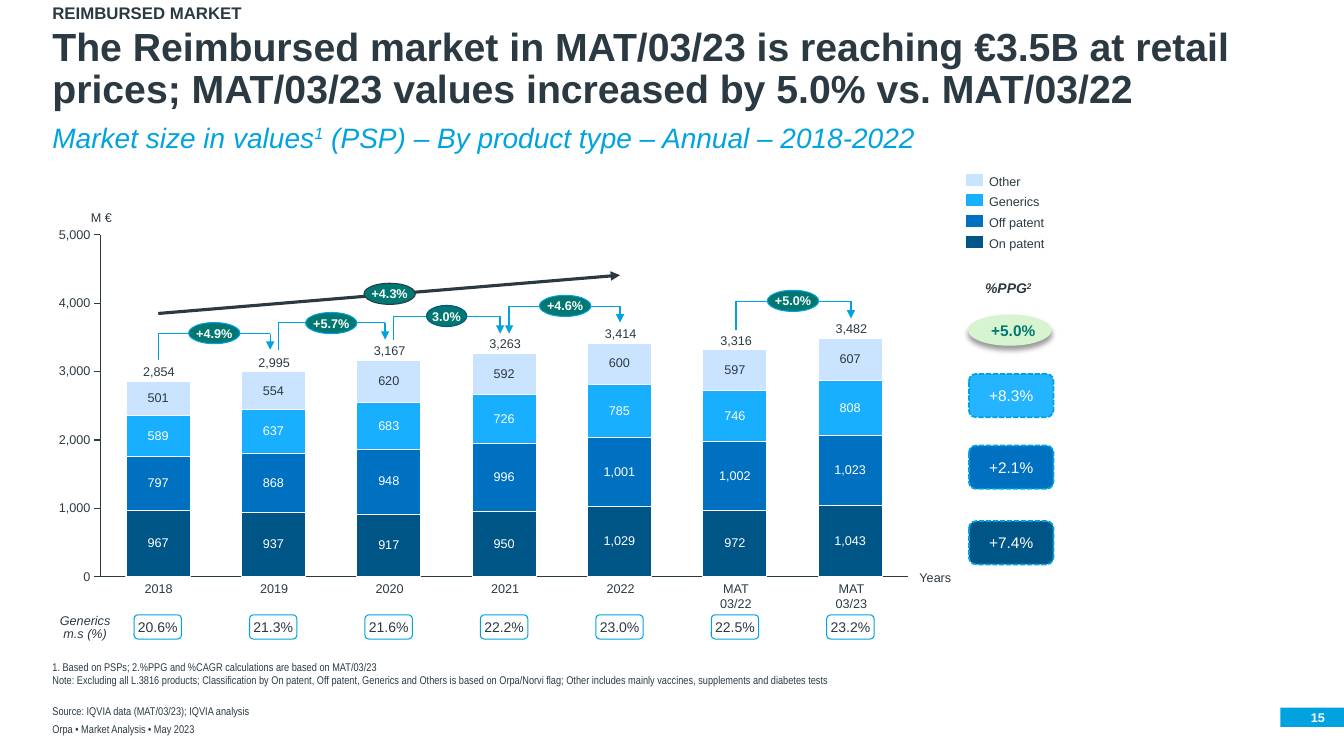
from lxml import etree
from pptx import Presentation
from pptx import util as u
from pptx.chart.data import CategoryChartData
from pptx.dml.color import RGBColor
from pptx.enum import chart as charts, dml, shapes, text
from pptx.oxml import parse_xml
from pptx.oxml.ns import nsdecls, qn

PX = 9144
DARK, CYAN, WHITE, GREEN = "2B3A42", "00A3E0", "FFFFFF", "007770"
FIRST_BAR, BAR_STEP = 157, 114.5
AXIS_BOTTOM, AXIS_HEIGHT, AXIS_MAX = 572, 339, 5000

YEARS = ["2018", "2019", "2020", "2021", "2022", "MAT\v03/22", "MAT\v03/23"]
TOTALS = [2854, 2995, 3167, 3263, 3414, 3316, 3482]
SHARES = ["20.6%", "21.3%", "21.6%", "22.2%", "23.0%", "22.5%", "23.2%"]
PRODUCTS = [
    ("On patent", "005587", WHITE, [967, 937, 917, 950, 1029, 972, 1043]),
    ("Off patent", "0070C0", WHITE, [797, 868, 948, 996, 1001, 1002, 1023]),
    ("Generics", "18AFFF", WHITE, [589, 637, 683, 726, 785, 746, 808]),
    ("Other", "CAE3FF", DARK, [501, 554, 620, 592, 600, 597, 607]),
]
BRACKETS = [
    (157, 268, 331, 357, 347, False),
    (276, 382, 320, 347, 337, False),
    (390, 496, 314, 337, 331, False),
    (505, 615, 304, 331, 320, True),
    (730, 844, 299, 327, 316, False),
]
GROWTH = [
    (187, 320, 51, "+4.9%", CYAN),
    (303, 310, 51, "+5.7%", CYAN),
    (361, 281, 51, "+4.3%", DARK),
    (423, 303, 40, "3.0%", "005587"),
    (535, 293, 51, "+4.6%", CYAN),
    (761, 288, 51, "+5.0%", CYAN),
]
PRODUCT_GROWTH = [(371, "+8.3%", "25B4FF"), (442, "+2.1%", "0070C0"), (517, "+7.4%", "005587")]


def px(value):
    return u.Emu(round(value * PX))


def rgb(value):
    return RGBColor.from_string(value)


def style_font(font, size, color, name="Arial", bold=False, italic=False):
    font.name, font.size, font.bold, font.italic = name, u.Pt(size), bold, italic
    font.color.rgb = rgb(color)


def write(shape, content, size=9, color=DARK, name="Arial", bold=False, italic=False,
          align="CENTER", anchor="MIDDLE", spacing=1.0, wrap=False):
    frame = shape.text_frame
    frame.auto_size = text.MSO_AUTO_SIZE.NONE
    frame.word_wrap = wrap
    frame.vertical_anchor = text.MSO_ANCHOR[anchor]
    frame.margin_left = frame.margin_right = frame.margin_top = frame.margin_bottom = 0
    for index, line in enumerate(content.split("\n")):
        paragraph = frame.add_paragraph() if index else frame.paragraphs[0]
        paragraph.alignment = text.PP_ALIGN[align]
        paragraph.line_spacing = spacing
        for row, part in enumerate(line.split("\v")):
            if row:
                paragraph.add_line_break()
            for piece, words in enumerate(part.split("^")):
                if words:
                    run = paragraph.add_run()
                    run.text = words
                    style_font(run.font, size, color, name, bold, italic)
                    if piece % 2:
                        run._r.get_or_add_rPr().set("baseline", "30000")


def add_text(slide, box, content, **style):
    shape = slide.shapes.add_textbox(*map(px, box))
    write(shape, content, **style)


def add_box(slide, kind, box, fill=None, line=None, width=0.75, dashed=False):
    shape = slide.shapes.add_shape(shapes.MSO_SHAPE[kind], *map(px, box))
    shape.shadow.inherit = False
    if fill:
        shape.fill.solid()
        shape.fill.fore_color.rgb = rgb(fill)
    else:
        shape.fill.background()
    if line:
        shape.line.color.rgb = rgb(line)
        shape.line.width = u.Pt(width)
        if dashed:
            shape.line.dash_style = dml.MSO_LINE.SQUARE_DOT
    else:
        shape.line.fill.background()
    return shape


def add_line(slide, start, end, color=CYAN, width=1, arrow=False):
    line = slide.shapes.add_connector(shapes.MSO_CONNECTOR.STRAIGHT, *map(px, start + end))
    line.line.color.rgb = rgb(color)
    line.line.width = u.Pt(width)
    if arrow:
        etree.SubElement(line.line._get_or_add_ln(), qn("a:tailEnd"), type="triangle")
    etree.SubElement(line._element.spPr, qn("a:effectLst"))


def add_bracket(slide, left, right, top, left_end, right_end, both):
    add_line(slide, (left, top), (left, left_end), arrow=both)
    add_line(slide, (left, top), (right, top))
    add_line(slide, (right, top), (right, right_end), arrow=True)


def add_shadow(shape):
    shape._element.spPr.find(qn("a:effectLst")).append(parse_xml(
        f'<a:outerShdw {nsdecls("a")} blurRad="50800" dist="38100" dir="5400000">'
        '<a:srgbClr val="000000"><a:alpha val="40000"/></a:srgbClr></a:outerShdw>'))


def place_plot(chart, x, y, w, h):
    area = chart._chartSpace.chart.plotArea
    for layout in area.findall(qn("c:layout")):
        area.remove(layout)
    sizes = "".join(f'<c:{tag} val="{value}"/>' for tag, value in zip("xywh", (x, y, w, h)))
    area.insert(0, parse_xml(
        f'<c:layout {nsdecls("c")}><c:manualLayout><c:layoutTarget val="inner"/>'
        f'<c:xMode val="edge"/><c:yMode val="edge"/>{sizes}</c:manualLayout></c:layout>'))


def add_market_chart(slide):
    data = CategoryChartData(number_format="#,##0")
    data.categories = [year.replace("\v", " ") for year in YEARS]
    for name, _, _, values in PRODUCTS:
        data.add_series(name, values)
    chart = slide.shapes.add_chart(
        charts.XL_CHART_TYPE.COLUMN_STACKED, *map(px, (46, 223, 864, 359)), data).chart
    chart.has_legend = chart.has_title = False
    style_font(chart.font, 9, DARK)
    place_plot(chart, 0.062, 0.028, 0.927, 0.945)

    plot = chart.plots[0]
    plot.gap_width, plot.overlap, plot.vary_by_categories = 80, 100, False
    for series, (_, fill, label_color, _) in zip(plot.series, PRODUCTS):
        series.format.fill.solid()
        series.format.fill.fore_color.rgb = rgb(fill)
        series.format.line.color.rgb = rgb(WHITE)
        series.format.line.width = u.Pt(0.75)
        labels = series.data_labels
        labels.show_value = True
        labels.number_format, labels.number_format_is_linked = "#,##0", False
        labels.position = charts.XL_LABEL_POSITION.CENTER
        style_font(labels.font, 9, label_color)

    years, values = chart.category_axis, chart.value_axis
    for axis in (years, values):
        axis.has_major_gridlines = False
        axis.minor_tick_mark = charts.XL_TICK_MARK.NONE
        axis.format.line.color.rgb = rgb(DARK)
        axis.format.line.width = u.Pt(0.75)
    years.tick_label_position = charts.XL_TICK_LABEL_POSITION.NONE
    years.major_tick_mark = charts.XL_TICK_MARK.NONE
    values.major_tick_mark = charts.XL_TICK_MARK.OUTSIDE
    values.minimum_scale, values.maximum_scale, values.major_unit = 0, AXIS_MAX, 1000
    values.tick_labels.number_format = "#,##0"
    values.tick_labels.number_format_is_linked = False
    style_font(values.tick_labels.font, 9, DARK)


def add_headings(slide):
    title = slide.shapes.title
    title.left, title.top, title.width, title.height = map(px, (52, 26, 1230, 85))
    write(title, "The Reimbursed market in MAT/03/23 is reaching €3.5B at retail prices; "
          "MAT/03/23 values increased by 5.0% vs. MAT/03/22",
          size=28, bold=True, align="LEFT", anchor="BOTTOM", spacing=0.9, wrap=True)
    lead = dict(align="LEFT", anchor="TOP", spacing=0.9, wrap=True)
    add_text(slide, (52, 5, 1230, 18), "REIMBURSED MARKET", size=12, bold=True, **lead)
    add_text(slide, (52, 123, 1230, 30),
             "Market size in values^1^ (PSP) – By product type – Annual – 2018-2022",
             size=20, color=CYAN, italic=True, **lead)


def add_footer(slide):
    small = dict(size=8, name="Arial Narrow", align="LEFT", anchor="BOTTOM", spacing=0.9, wrap=True)
    add_text(slide, (52, 657, 1230, 24),
             "1. Based on PSPs; 2.%PPG and %CAGR calculations are based on MAT/03/23\n"
             "Note: Excluding all L.3816 products; Classification by On patent, Off patent, "
             "Generics and Others is based on Orpa/Norvi flag; Other includes mainly vaccines, "
             "supplements and diabetes tests", **small)
    add_text(slide, (52, 700, 827, 12), "Source: IQVIA data (MAT/03/23); IQVIA analysis", **small)
    add_text(slide, (52, 718, 827, 12), "Orpa • Market Analysis • May 2023", **small)
    add_box(slide, "RECTANGLE", (1270, 702, 63, 19), CYAN)
    add_text(slide, (1270, 702, 44, 19), "15", color=WHITE, bold=True, align="RIGHT")


def add_columns(slide):
    for index, (year, total, share) in enumerate(zip(YEARS, TOTALS, SHARES)):
        center = FIRST_BAR + index * BAR_STEP
        bar_top = AXIS_BOTTOM - total * AXIS_HEIGHT / AXIS_MAX
        add_text(slide, (center - 17, bar_top - 16, 35, 14), f"{total:,}", anchor="BOTTOM", spacing=0.9)
        add_text(slide, (center - 16, 576, 33, 30), year, anchor="TOP")
        share_box = add_box(slide, "ROUNDED_RECTANGLE", (center - 24, 610, 47, 24), line=CYAN)
        write(share_box, share, size=10)
    add_text(slide, (53, 610, 63, 26), "Generics\nm.s (%)", italic=True, anchor="TOP", spacing=0.85)
    add_text(slide, (90, 208, 21, 15), "M €", anchor="BOTTOM")
    add_text(slide, (912, 565, 33, 15), "Years", align="LEFT")


def add_growth(slide):
    for bracket in BRACKETS:
        add_bracket(slide, *bracket)
    add_line(slide, (157, 311), (615, 273), DARK, 2.25, True)
    for left, top, width, label, line in GROWTH:
        oval = add_box(slide, "OVAL", (left, top, width, 21), GREEN, line)
        write(oval, label, color=WHITE, bold=True)


def add_side_panel(slide):
    for index, (name, fill, _, _) in enumerate(reversed(PRODUCTS)):
        top = 172 + index * 62 // 3
        add_box(slide, "RECTANGLE", (958, top, 18, 13), fill, WHITE)
        add_text(slide, (981, top, 55, 15), name, align="LEFT")
    add_text(slide, (955, 272, 90, 27), "%PPG^2^", size=10, bold=True, italic=True)
    add_shadow(add_box(slide, "OVAL", (960, 312, 83, 31), "D7F4D0"))
    add_text(slide, (960, 315, 90, 26), "+5.0%", size=11, color=GREEN, bold=True)
    for top, label, fill in PRODUCT_GROWTH:
        pill = add_box(slide, "ROUNDED_RECTANGLE", (961, top, 84, 43), fill, CYAN, 1.25, True)
        write(pill, label, size=11, color=WHITE)


def main():
    presentation = Presentation()
    presentation.slide_width, presentation.slide_height = px(1333), px(750)
    slide = presentation.slides.add_slide(presentation.slide_layouts[5])
    add_headings(slide)
    add_market_chart(slide)
    add_columns(slide)
    add_growth(slide)
    add_side_panel(slide)
    add_footer(slide)
    presentation.save("out.pptx")


if __name__ == "__main__":
    main()
